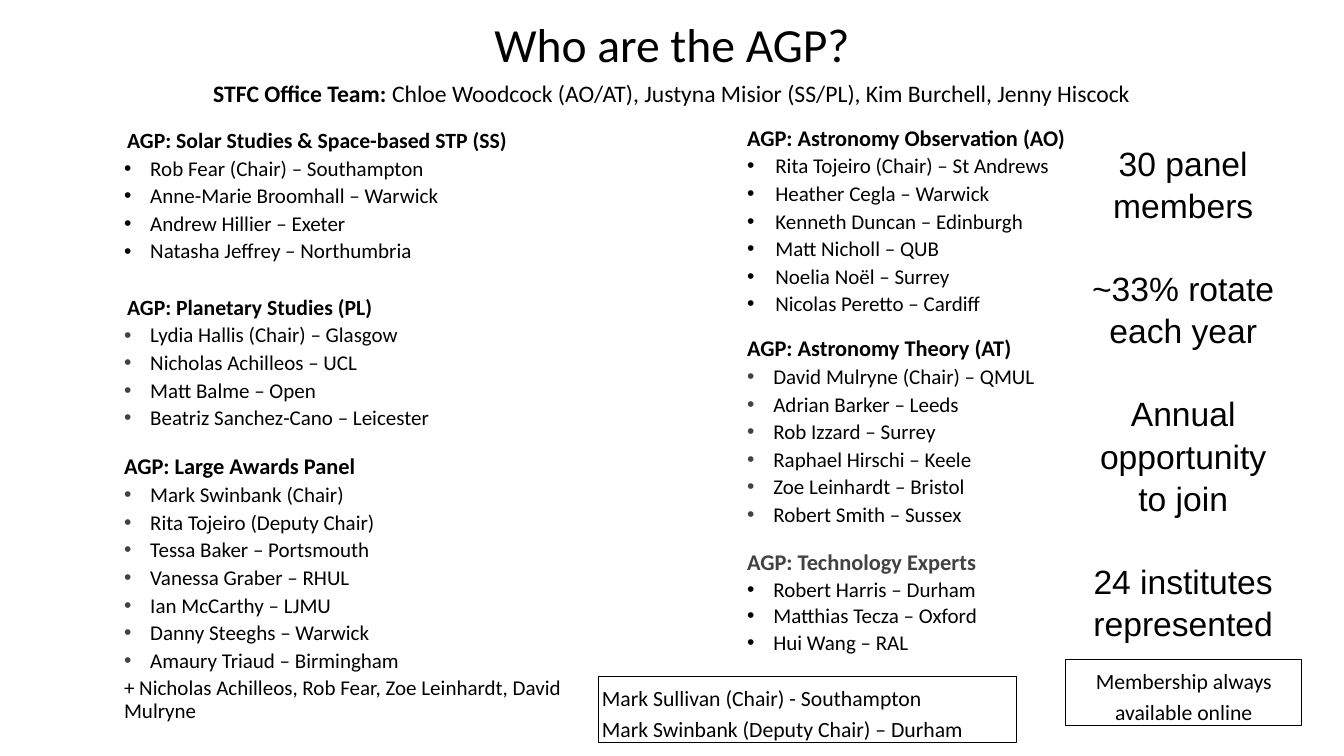
import pptx
import pptx.dml.color
import pptx.enum.shapes
import pptx.enum.text
import pptx.oxml.ns
import pptx.util
from lxml import etree

Inches, Pt = pptx.util.Inches, pptx.util.Pt
BLACK = pptx.dml.color.RGBColor(0x00, 0x00, 0x00)
GREY = pptx.dml.color.RGBColor(0x42, 0x42, 0x42)
MID = pptx.enum.text.PP_ALIGN.CENTER
LEFT = pptx.enum.text.PP_ALIGN.LEFT

deck = pptx.Presentation()
deck.slide_width, deck.slide_height = Inches(13.33), Inches(7.5)
slide = deck.slides.add_slide(deck.slide_layouts[6])


def frame(area, inset, border=False, middle=False):
    """Add a text area, boxed if border is set, and return its text frame."""
    area = [Inches(n) for n in area]
    if border:
        box = slide.shapes.add_shape(pptx.enum.shapes.MSO_SHAPE.RECTANGLE, *area)
        box.shadow.inherit = False
        box.fill.background()
        box.line.color.rgb = BLACK
        box.line.width = Pt(0.75)
    else:
        box = slide.shapes.add_textbox(*area)
    anchor = pptx.enum.text.MSO_ANCHOR
    form = {"word_wrap": True,
            "vertical_anchor": anchor.MIDDLE if middle else anchor.TOP}
    for side in ("left", "right", "top", "bottom"):
        form["margin_" + side] = Inches(inset)
    for name, value in form.items():
        setattr(box.text_frame, name, value)
    return box.text_frame


def write(body, text, size, face="Calibri", bold=False, color=BLACK, align=LEFT,
          lines=1.0, before=0, indent=0, hang=0, dot=None):
    """Add a paragraph to body; dot is the colour of its bullet, if any."""
    first = body.paragraphs[0]
    para = first if not first.runs else body.add_paragraph()
    form = {"alignment": align, "line_spacing": lines, "space_before": Pt(before)}
    for name, value in form.items():
        setattr(para, name, value)
    props = para._p.get_or_add_pPr()
    props.set("marL", str(Inches(indent)))
    props.set("indent", str(-Inches(hang)))
    if dot is not None:
        tag = pptx.oxml.ns.qn
        shade = etree.SubElement(props, tag("a:buClr"))
        etree.SubElement(shade, tag("a:srgbClr"), val=str(dot))
        etree.SubElement(props, tag("a:buFont"), typeface="Arial")
        etree.SubElement(props, tag("a:buChar"), char="•")
    run = para.add_run()
    run.text = text
    for name, value in {"name": face, "size": Pt(size), "bold": bold}.items():
        setattr(run.font, name, value)
    run.font.color.rgb = color
    return para


title = frame((4.38, 0.04, 4.57, 0.78), 0.06, middle=True)
write(title, "Who are the AGP?", 34, align=MID)

# Each panel: heading, heading format, bullet format, members
right = [
    ("AGP: Astronomy Observation (AO)",
     {"size": 16, "indent": 0.03, "before": 4.9},
     {"indent": 0.31, "hang": 0.28, "before": 3.5, "dot": BLACK},
     ["Rita Tojeiro (Chair) – St Andrews", "Heather Cegla – Warwick",
      "Kenneth Duncan – Edinburgh", "Matt Nicholl – QUB",
      "Noelia Noël – Surrey", "Nicolas Peretto – Cardiff"]),
    ("AGP: Astronomy Theory (AT)",
     {"size": 16, "indent": 0.03, "before": 15, "lines": 0.9},
     {"indent": 0.29, "hang": 0.26, "before": 3.5, "dot": GREY},
     ["David Mulryne (Chair) – QMUL", "Adrian Barker – Leeds",
      "Rob Izzard – Surrey", "Raphael Hirschi – Keele",
      "Zoe Leinhardt – Bristol", "Robert Smith – Sussex"]),
    ("AGP: Technology Experts",
     {"size": 16, "indent": 0.03, "before": 15.1, "color": GREY},
     {"indent": 0.29, "hang": 0.26, "before": 2.8, "dot": BLACK},
     ["Robert Harris – Durham", "Matthias Tecza – Oxford", "Hui Wang – RAL"]),
]
item = {"indent": 0.26, "hang": 0.26, "before": 3.5}
left = [
    ("AGP: Solar Studies & Space-based STP (SS)",
     {"size": 15.5, "indent": 0.03, "before": 4.9, "lines": 1.2},
     {**item, "dot": BLACK},
     ["Rob Fear (Chair) – Southampton", "Anne-Marie Broomhall – Warwick",
      "Andrew Hillier – Exeter", "Natasha Jeffrey – Northumbria"]),
    ("AGP: Planetary Studies (PL)",
     {"size": 15.5, "indent": 0.03, "before": 18, "lines": 1.2},
     {**item, "dot": GREY},
     ["Lydia Hallis (Chair) – Glasgow", "Nicholas Achilleos – UCL",
      "Matt Balme – Open", "Beatriz Sanchez-Cano – Leicester"]),
    ("AGP: Large Awards Panel",
     {"size": 16, "before": 18, "lines": 0.9},
     {**item, "dot": GREY},
     ["Mark Swinbank (Chair)", "Rita Tojeiro (Deputy Chair)",
      "Tessa Baker – Portsmouth", "Vanessa Graber – RHUL",
      "Ian McCarthy – LJMU", "Danny Steeghs – Warwick",
      "Amaury Triaud – Birmingham"]),
]
for area, inset, panels in [((7.32, 1.17, 4.01, 5.61), 0.06, right),
                            ((1.19, 1.17, 4.71, 6.21), 0.04, left)]:
    column = frame(area, inset)
    for head, style, bullet, members in panels:
        write(column, head, bold=True, **style)
        for member in members:
            write(column, member, 15, lines=0.9, **bullet)
write(column, "+ Nicholas Achilleos, Rob Fear, Zoe Leinhardt, David Mulryne",
      15, lines=0.9, before=3.5)

chairs = frame((5.94, 6.71, 4.14, 0.66), 0.03, border=True)
for chair in ("Mark Sullivan (Chair) - Southampton",
              "Mark Swinbank (Deputy Chair) – Durham"):
    write(chairs, chair, 15.5, lines=1.2)

office = frame((1.74, 0.7, 9.85, 0.38), 0.03)
team = write(office, "STFC Office Team: ", 16.9, bold=True, align=MID, lines=1.2)
names = team.add_run()
names.text = ("Chloe Woodcock (AO/AT), Justyna Misior (SS/PL), "
              "Kim Burchell, Jenny Hiscock")
for name, value in {"name": "Calibri", "size": Pt(16.9), "bold": False}.items():
    setattr(names.font, name, value)
names.font.color.rgb = BLACK

facts = frame((10.71, 1.41, 2.05, 4.96), 0.06, middle=True)
for rank, fact in enumerate(["30 panel members", "~33% rotate each year",
                             "Annual opportunity to join",
                             "24 institutes represented"]):
    write(facts, fact, 24, face="Arial", align=MID, lines=1.05,
          before=29 if rank else 0)

online = frame((10.57, 6.54, 2.34, 0.66), 0.03, border=True)
write(online, "Membership always available online", 15.5, align=MID, lines=1.2)

deck.save("out.pptx")
